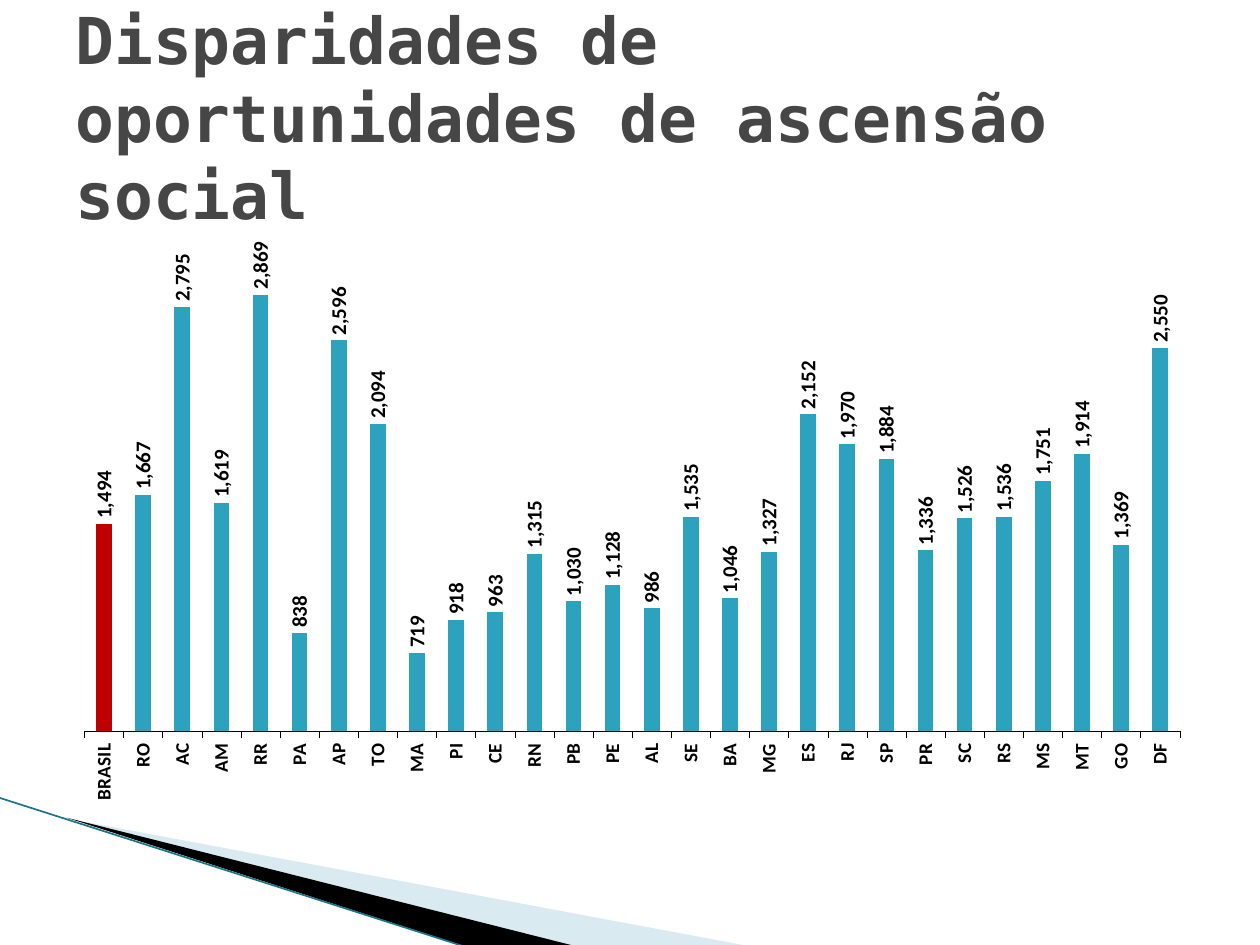
from typing import NamedTuple

from lxml.etree import SubElement
from pptx import Presentation
from pptx.chart.data import CategoryChartData
from pptx.dml.color import RGBColor
from pptx.enum.chart import XL_CHART_TYPE, XL_LABEL_POSITION, XL_TICK_MARK
from pptx.enum.shapes import MSO_CONNECTOR
from pptx.enum.text import MSO_ANCHOR
from pptx.oxml import parse_xml
from pptx.oxml.ns import nsdecls, qn
from pptx.util import Inches, Pt

BLACK = RGBColor(0x00, 0x00, 0x00)
GREY = RGBColor(0x46, 0x46, 0x46)
TEAL = RGBColor(0x2D, 0xA2, 0xBF)
DEEP = RGBColor(0x1B, 0x74, 0x88)
PALE = RGBColor(0xA0, 0xCB, 0xDC)
RED = RGBColor(0xC0, 0x00, 0x00)


class Wedge(NamedTuple):
    points: list
    color: RGBColor
    alpha: int


WEDGES = [
    Wedge([(0.55, 6.5), (5.95, 7.51), (4.56, 7.51)], PALE, 40),
    Wedge([(0.53, 6.49), (4.57, 7.51), (3.72, 7.52)], BLACK, 100),
]

RATES = {
    "BRASIL": 1494, "RO": 1667, "AC": 2795, "AM": 1619, "RR": 2869,
    "PA": 838, "AP": 2596, "TO": 2094, "MA": 719, "PI": 918,
    "CE": 963, "RN": 1315, "PB": 1030, "PE": 1128, "AL": 986,
    "SE": 1535, "BA": 1046, "MG": 1327, "ES": 2152, "RJ": 1970,
    "SP": 1884, "PR": 1336, "SC": 1526, "RS": 1536, "MS": 1751,
    "MT": 1914, "GO": 1369, "DF": 2550,
}
# Inner plot area, as shares of the chart
PLOT = {"x": 0.019, "y": 0.137, "w": 0.966, "h": 0.708}


def style(font, *, name: str, size: float, color: RGBColor) -> None:
    font.name, font.size, font.bold = name, Pt(size), True
    font.color.rgb = color


def add_text(slide, text: str, *, left: float, top: float, width: float,
             height: float, **look) -> None:
    box = slide.shapes.add_textbox(Inches(left), Inches(top),
                                   Inches(width), Inches(height))
    frame = box.text_frame
    frame.word_wrap = True
    frame.vertical_anchor = MSO_ANCHOR.MIDDLE
    run = frame.paragraphs[0].add_run()
    run.text = text
    style(run.font, **look)


def add_wedge(slide, wedge: Wedge) -> None:
    start, *rest = [(Inches(x), Inches(y)) for x, y in wedge.points]
    pen = slide.shapes.build_freeform(*start)
    pen.add_line_segments(rest, close=True)
    shape = pen.convert_to_shape()
    shape.shadow.inherit = False
    shape.line.fill.background()
    shape.fill.solid()
    shape.fill.fore_color.rgb = wedge.color
    if wedge.alpha < 100:
        tone = shape.fill._xPr.find(qn("a:solidFill"))[0]
        SubElement(tone, qn("a:alpha"), val=str(wedge.alpha * 1000))


def add_edge(slide) -> None:
    edge = slide.shapes.add_connector(
        MSO_CONNECTOR.STRAIGHT, Inches(-0.01), Inches(6.33),
        Inches(3.71), Inches(7.52))
    edge.line.color.rgb = DEEP
    edge.line.width = Pt(0.95)
    SubElement(edge._element.spPr, qn("a:effectLst"))


def turn(part) -> None:
    """Make the text of an axis or label set read upwards."""
    body = part.find(qn("c:txPr")).find(qn("a:bodyPr"))
    body.set("rot", "-5400000")
    body.set("vert", "horz")


def set_plot(chart) -> None:
    sides = "".join(f'<c:{key}Mode val="edge"/>' for key in "xy")
    sizes = "".join(f'<c:{key} val="{val}"/>' for key, val in PLOT.items())
    area = chart._chartSpace.chart.plotArea
    for old in area.findall(qn("c:layout")):
        area.remove(old)
    area.insert(0, parse_xml(
        f'<c:layout {nsdecls("c")}><c:manualLayout>'
        f'<c:layoutTarget val="inner"/>{sides}{sizes}'
        '</c:manualLayout></c:layout>'))


def add_rates(slide) -> None:
    data = CategoryChartData()
    data.categories = list(RATES)
    data.add_series("Series 1", list(RATES.values()))
    chart = slide.shapes.add_chart(
        XL_CHART_TYPE.COLUMN_CLUSTERED, Inches(0.5), Inches(1.62),
        Inches(9), Inches(4.95), data).chart
    chart.has_legend = chart.has_title = False
    style(chart.font, name="Arial", size=8, color=BLACK)
    set_plot(chart)

    # Axes
    scale = chart.value_axis
    scale.minimum_scale, scale.maximum_scale = 250, 2900
    scale.major_unit = 100
    scale.has_major_gridlines = False
    scale.visible = False
    states = chart.category_axis
    states.major_tick_mark = XL_TICK_MARK.OUTSIDE
    states.format.line.color.rgb = BLACK
    states.format.line.width = Pt(0.25)
    style(states.tick_labels.font, name="Calibri", size=11, color=BLACK)
    turn(states._element)

    # Columns, with the national one in red
    plot = chart.plots[0]
    plot.gap_width = 150
    plot.vary_by_categories = False
    bars = plot.series[0]
    for part, color in ((bars, TEAL), (bars.points[0], RED)):
        part.format.fill.solid()
        part.format.fill.fore_color.rgb = color

    # Values above the columns
    tags = bars.data_labels
    tags.show_value = True
    tags.position = XL_LABEL_POSITION.OUTSIDE_END
    tags.number_format = "#,##0"
    tags.number_format_is_linked = False
    style(tags.font, name="Calibri", size=12, color=BLACK)
    turn(tags._element)


def main() -> None:
    deck = Presentation()
    deck.slide_width, deck.slide_height = Inches(10), Inches(7.5)
    slide = deck.slides.add_slide(deck.slide_layouts[6])

    # Corner decoration
    for wedge in WEDGES:
        add_wedge(slide, wedge)
    add_edge(slide)

    # Title and chart
    add_text(slide, "Disparidades de oportunidades de ascensão social",
             left=0.5, top=0.3, width=9, height=1.25,
             name="DejaVu Sans Mono", size=36.9, color=GREY)
    add_rates(slide)
    deck.save("out.pptx")


if __name__ == "__main__":
    main()
